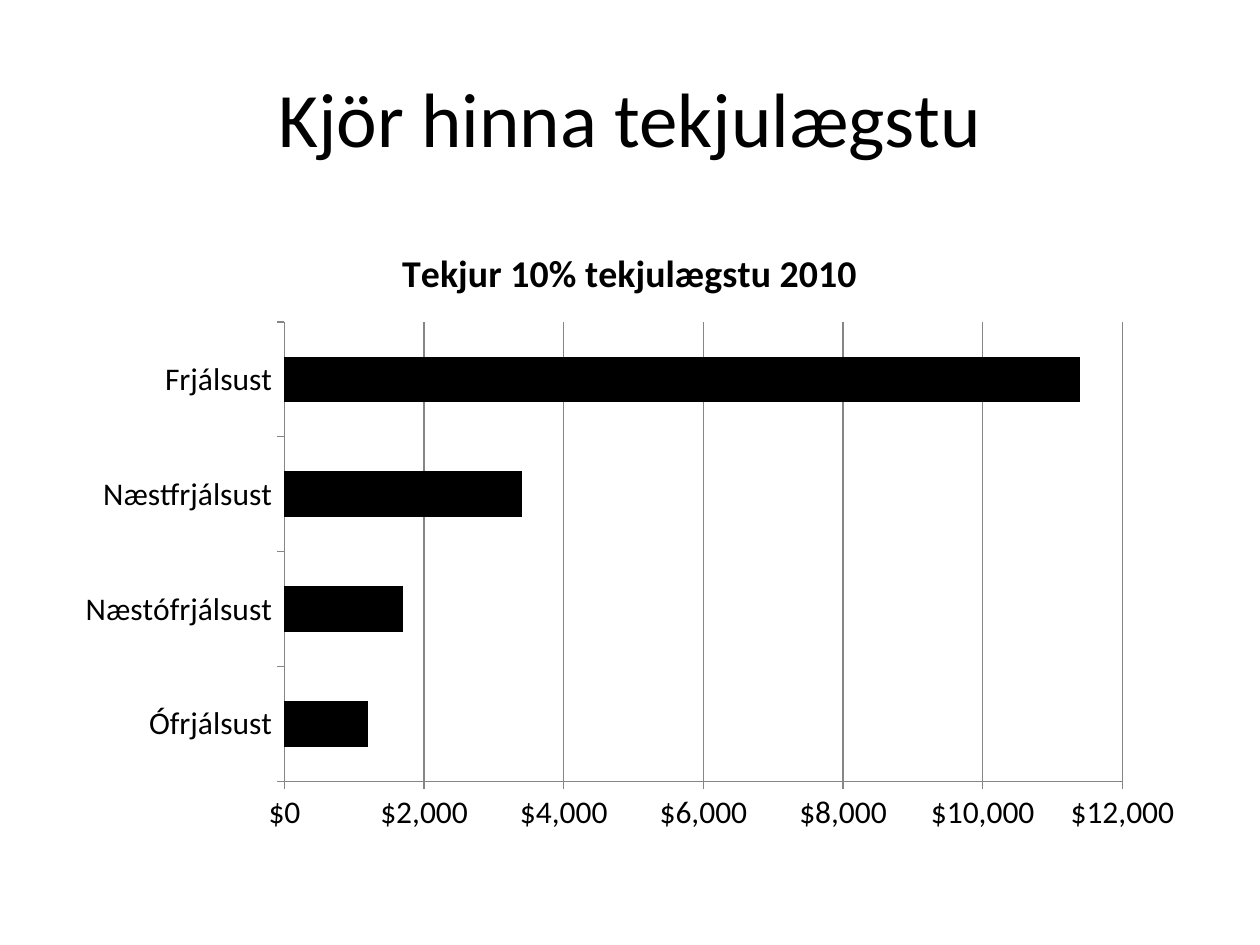
from dataclasses import dataclass

from pptx import Presentation
from pptx.chart.data import CategoryChartData
from pptx.dml.color import RGBColor
from pptx.enum.chart import XL_CHART_TYPE, XL_TICK_MARK
from pptx.enum.text import MSO_ANCHOR, PP_ALIGN
from pptx.util import Inches, Pt


@dataclass(frozen=True)
class Theme:
    font: str = "Calibri"
    ink: RGBColor = RGBColor(0x00, 0x00, 0x00)
    grid: RGBColor = RGBColor(0x86, 0x86, 0x86)
    heading_size: float = 44
    chart_title_size: float = 21.6
    label_size: float = 18
    line_width: float = 0.75


def format_font(font, *, name, size, color, bold=False):
    font.name = name
    font.size = Pt(size)
    font.bold = bold
    font.color.rgb = color


def write_text(frame, text, *, align=PP_ALIGN.CENTER, **font_format):
    paragraph = frame.paragraphs[0]
    paragraph.alignment = align
    run = paragraph.add_run()
    run.text = text
    format_font(run.font, **font_format)


class SlideBuilder:
    def __init__(self, slide, theme):
        self.slide = slide
        self.theme = theme

    def add_heading(self, text, left, top, width, height):
        box = self.slide.shapes.add_textbox(left, top, width, height)
        frame = box.text_frame
        frame.word_wrap = True
        frame.vertical_anchor = MSO_ANCHOR.MIDDLE
        write_text(frame, text, name=self.theme.font,
                   size=self.theme.heading_size, color=self.theme.ink)

    def style_line(self, line):
        line.color.rgb = self.theme.grid
        line.width = Pt(self.theme.line_width)

    def add_bar_chart(self, title, values, left, top, width, height):
        theme = self.theme
        income = CategoryChartData()
        income.categories = list(values)
        income.add_series(title, list(values.values()))
        chart = self.slide.shapes.add_chart(
            XL_CHART_TYPE.BAR_CLUSTERED, left, top, width, height, income).chart
        format_font(chart.font, name=theme.font, size=theme.label_size,
                    color=theme.ink)
        chart.has_legend = False
        chart.has_title = True
        write_text(chart.chart_title.text_frame, title, name=theme.font,
                   size=theme.chart_title_size, color=theme.ink, bold=True)
        chart.chart_title.include_in_layout = False

        bars = chart.plots[0]
        bars.vary_by_categories = False
        bars.gap_width = 150
        fill = bars.series[0].format.fill
        fill.solid()
        fill.fore_color.rgb = theme.ink

        for axis in (chart.category_axis, chart.value_axis):
            axis.major_tick_mark = XL_TICK_MARK.OUTSIDE
            axis.minor_tick_mark = XL_TICK_MARK.NONE
            self.style_line(axis.format.line)
        chart.category_axis.has_major_gridlines = False

        dollars = chart.value_axis
        dollars.minimum_scale = 0
        dollars.maximum_scale = 12000
        dollars.major_unit = 2000
        dollars.has_major_gridlines = True
        self.style_line(dollars.major_gridlines.format.line)
        dollars.tick_labels.number_format = '"$"#,##0'
        dollars.tick_labels.number_format_is_linked = False


def main():
    deck = Presentation()
    deck.slide_width = Inches(10)
    deck.slide_height = Inches(7.5)
    builder = SlideBuilder(deck.slides.add_slide(deck.slide_layouts[6]), Theme())

    builder.add_heading("Kjör hinna tekjulægstu",
                        Inches(0.5), Inches(0.3), Inches(9), Inches(1.25))
    builder.add_bar_chart(
        "Tekjur 10% tekjulægstu 2010",
        {"Ófrjálsust": 1200, "Næstófrjálsust": 1700,
         "Næstfrjálsust": 3400, "Frjálsust": 11400},
        Inches(0.5), Inches(1.75), Inches(9), Inches(4.95))
    deck.save("out.pptx")


if __name__ == "__main__":
    main()
